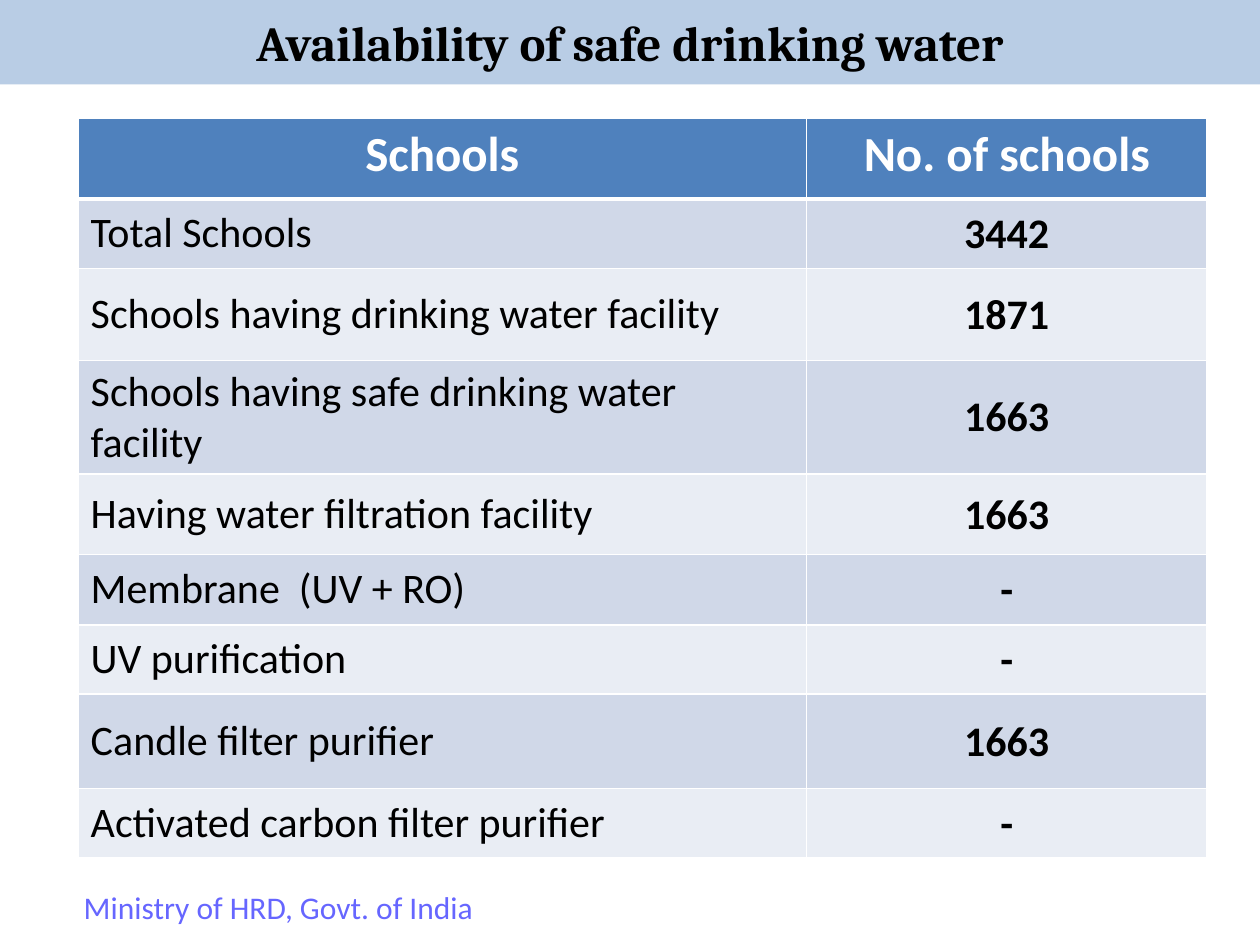
from lxml import etree
from pptx import Presentation
from pptx.dml.color import RGBColor
from pptx.enum.shapes import MSO_SHAPE
from pptx.enum.text import MSO_ANCHOR, PP_ALIGN
from pptx.oxml.ns import qn
from pptx.util import Inches, Pt

RECTANGLE = MSO_SHAPE.RECTANGLE
LEFT, CENTER = PP_ALIGN.LEFT, PP_ALIGN.CENTER
TOP, MIDDLE = MSO_ANCHOR.TOP, MSO_ANCHOR.MIDDLE
HEADER_FILL = "4F81BD"
BAND_FILLS = ("D0D8E8", "E9EDF4")
LABEL_INSETS = (0.1, 0.05, 0.1, 0.05)
COUNT_INSETS = (0.01, 0.01, 0.01, 0)
COLUMN_WIDTHS = (5.78, 3.18)
ROW_HEIGHTS = (0.64, 0.55, 0.73, 0.76, 0.64, 0.56, 0.55, 0.75, 0.55)
ROWS = (
    ("Schools", "No. of schools"),
    ("Total Schools", "3442"),
    ("Schools having drinking water facility", "1871"),
    ("Schools having safe drinking water facility", "1663"),
    ("Having water filtration facility", "1663"),
    ("Membrane  (UV + RO)", "-"),
    ("UV purification", "-"),
    ("Candle filter purifier", "1663"),
    ("Activated carbon filter purifier", "-"),
)


def rgb(color):
    """Return the colour for a hex string."""
    return RGBColor.from_string(color)


def write(tf, text, size, color, font="Calibri", bold=False, align=CENTER):
    """Set one formatted paragraph in a text frame."""
    tf.text = text
    p = tf.paragraphs[0]
    p.alignment = align
    f = p.runs[0].font
    f.name, f.size, f.bold = font, Pt(size), bold
    f.color.rgb = rgb(color)


def add_title(s, text):
    """Add the title band across the top."""
    sp = s.shapes.add_shape(RECTANGLE, 0, 0, Inches(10), Inches(0.67))
    sp.shadow.inherit = False
    sp.fill.solid()
    sp.fill.fore_color.rgb = rgb("B9CDE5")
    sp.line.fill.background()
    sp.text_frame.vertical_anchor = MIDDLE
    write(sp.text_frame, text, 28, "000000", "Cambria", True)


def add_source(s, text):
    """Add the source note under the table."""
    sp = s.shapes.add_textbox(Inches(0.25), Inches(7), Inches(3.92), Inches(0.4))
    sp.text_frame.word_wrap = True
    write(sp.text_frame, text, 18, "6666FF")


def set_borders(cell, top, bottom):
    """Give a cell white borders, with top and bottom widths in points."""
    tc_pr = cell._tc.get_or_add_tcPr()
    for side, width in (("L", 1), ("R", 1), ("T", top), ("B", bottom)):
        line = etree.SubElement(tc_pr, qn(f"a:ln{side}"), w=str(Pt(width)))
        fill = etree.SubElement(line, qn("a:solidFill"))
        etree.SubElement(fill, qn("a:srgbClr"), val="FFFFFF")


def format_cell(cell, text, row, col):
    """Fill and format one table cell by its position."""
    header = row == 0
    count = col == 1 and not header
    insets = COUNT_INSETS if count else LABEL_INSETS
    cell.margin_left, cell.margin_top, cell.margin_right, cell.margin_bottom = map(Inches, insets)
    cell.vertical_anchor = TOP if header else MIDDLE
    set_borders(cell, 3 if row == 1 else 1, 3 if header else 1)
    cell.fill.solid()
    cell.fill.fore_color.rgb = rgb(HEADER_FILL if header else BAND_FILLS[(row - 1) % 2])
    write(cell.text_frame, text, 28 if header else 24, "FFFFFF" if header else "000000",
          bold=header or count, align=CENTER if header or count else LEFT)


def add_school_table(s):
    """Add the table of school counts."""
    table = s.shapes.add_table(len(ROWS), len(COLUMN_WIDTHS), Inches(0.62), Inches(0.94),
                               Inches(sum(COLUMN_WIDTHS)), Inches(sum(ROW_HEIGHTS))).table
    for column, width in zip(table.columns, COLUMN_WIDTHS):
        column.width = Inches(width)
    for i, (height, texts) in enumerate(zip(ROW_HEIGHTS, ROWS)):
        table.rows[i].height = Inches(height)
        for j, text in enumerate(texts):
            format_cell(table.cell(i, j), text, i, j)


def main():
    """Build and save the slide."""
    prs = Presentation()
    prs.slide_width, prs.slide_height = Inches(10), Inches(7.5)
    s = prs.slides.add_slide(prs.slide_layouts[6])
    add_title(s, "Availability of safe drinking water")
    add_source(s, "Ministry of HRD, Govt. of India")
    add_school_table(s)
    prs.save("out.pptx")


if __name__ == "__main__":
    main()
